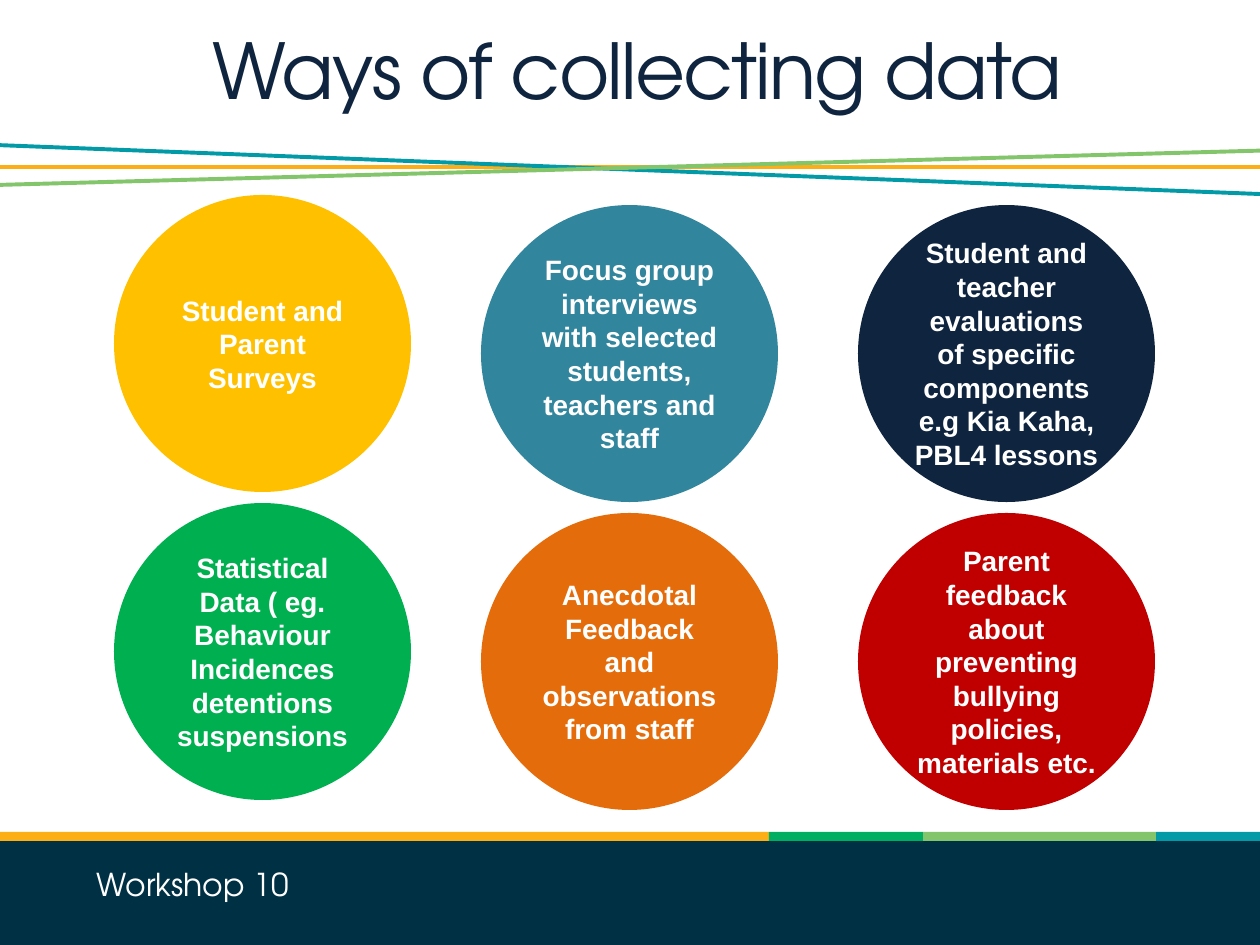
from dataclasses import dataclass

from lxml.etree import SubElement
from pptx import Presentation
from pptx.dml.color import RGBColor
from pptx.enum.shapes import MSO_CONNECTOR, MSO_SHAPE
from pptx.enum.text import MSO_ANCHOR, PP_ALIGN
from pptx.oxml.ns import qn
from pptx.util import Emu, Pt

SCALE = 914400 / 126  # EMU per px


@dataclass(frozen=True)
class Theme:
    white: str = "FFFFFF"
    ink: str = "0F243E"
    footer: str = "003044"
    amber: str = "FBAE16"
    teal: str = "019AA6"
    lime: str = "82C56A"
    green: str = "00AE61"
    circle_green: str = "00B050"
    circle_yellow: str = "FFC000"
    circle_orange: str = "E46C0A"
    circle_blue: str = "31859C"
    circle_red: str = "C00000"
    heading_font: str = "TeX Gyre Adventor"
    body_font: str = "Arial"
    title_size: int = 44
    footer_size: int = 18
    body_size: int = 16
    line_width: float = 2.25


def px(*lengths):
    """Turn px lengths into EMU."""
    return [Emu(round(n * SCALE)) for n in lengths]


class SlideBuilder:
    def __init__(self, slide, theme):
        self.s = slide
        self.theme = theme

    def shape(self, kind, box, color):
        sp = self.s.shapes.add_shape(kind, *px(*box))
        sp.shadow.inherit = False
        sp.fill.solid()
        sp.fill.fore_color.rgb = RGBColor.from_string(color)
        sp.line.fill.background()
        return sp

    def bar(self, box, color):
        self.shape(MSO_SHAPE.RECTANGLE, box, color)

    def line(self, ends, color):
        c = self.s.shapes.add_connector(MSO_CONNECTOR.STRAIGHT, *px(*ends))
        c.line.color.rgb = RGBColor.from_string(color)
        c.line.width = Pt(self.theme.line_width)
        SubElement(c._element.spPr, qn("a:effectLst"))

    def set_text(self, sp, text, font, size, color, align, bold=False):
        tf = sp.text_frame
        tf.word_wrap = True
        tf.text = text
        p = tf.paragraphs[0]
        p.alignment = align
        r = p.runs[0]
        r.font.name = font
        r.font.size = Pt(size)
        r.font.bold = bold
        r.font.color.rgb = RGBColor.from_string(color)
        return r

    def circle(self, left, top, size, text, color):
        sp = self.shape(MSO_SHAPE.OVAL, (left, top, size, size), color)
        sp.text_frame.vertical_anchor = MSO_ANCHOR.MIDDLE
        t = self.theme
        self.set_text(sp, text, t.body_font, t.body_size, t.white,
                      PP_ALIGN.CENTER, bold=True)

    def heading(self, box, text, size, color, align, spacing=0):
        """Add a text box in the heading font; spacing is in points."""
        sp = self.s.shapes.add_textbox(*px(*box))
        r = self.set_text(sp, text, self.theme.heading_font, size, color,
                          align)
        if spacing:
            r.font._element.set("spc", str(spacing * 100))


def main():
    prs = Presentation()
    prs.slide_width, prs.slide_height = px(1260, 945)
    t = Theme()
    b = SlideBuilder(prs.slides.add_slide(prs.slide_layouts[6]), t)

    b.bar((0, 839, 1260, 106), t.footer)
    stripes = [(0, 769, t.amber), (1156, 1260, t.teal),
               (923, 1156, t.lime), (769, 923, t.green)]
    for left, right, color in stripes:
        b.bar((left, 832, right - left, 9), color)

    for y1, y2, color in [(167, 167, t.amber), (145, 195, t.teal),
                          (185, 150, t.lime)]:
        b.line((-4, y1, 1284, y2), color)

    columns = [
        (114, 195, [("Student and Parent Surveys", t.circle_yellow),
                    ("Statistical Data ( eg. Behaviour Incidences "
                     "detentions suspensions", t.circle_green)]),
        (481, 205, [("Focus group interviews with selected students, "
                     "teachers and staff", t.circle_blue),
                    ("Anecdotal Feedback and observations from staff",
                     t.circle_orange)]),
        (858, 205, [("Student and teacher evaluations of specific "
                     "components e.g Kia Kaha, PBL4 lessons", t.ink),
                    ("Parent feedback about preventing bullying policies, "
                     "materials etc.", t.circle_red)]),
    ]
    diameter, row_step = 297, 308
    for left, top, circles in columns:
        for row, (text, color) in enumerate(circles):
            b.circle(left, top + row * row_step, diameter, text, color)

    b.heading((84, 859, 228, 50), "Workshop 10", t.footer_size, t.white,
              PP_ALIGN.LEFT)
    b.heading((-25, 16, 1324, 158), "Ways of collecting data", t.title_size,
              t.ink, PP_ALIGN.CENTER, spacing=-1)

    prs.save("out.pptx")


if __name__ == "__main__":
    main()
